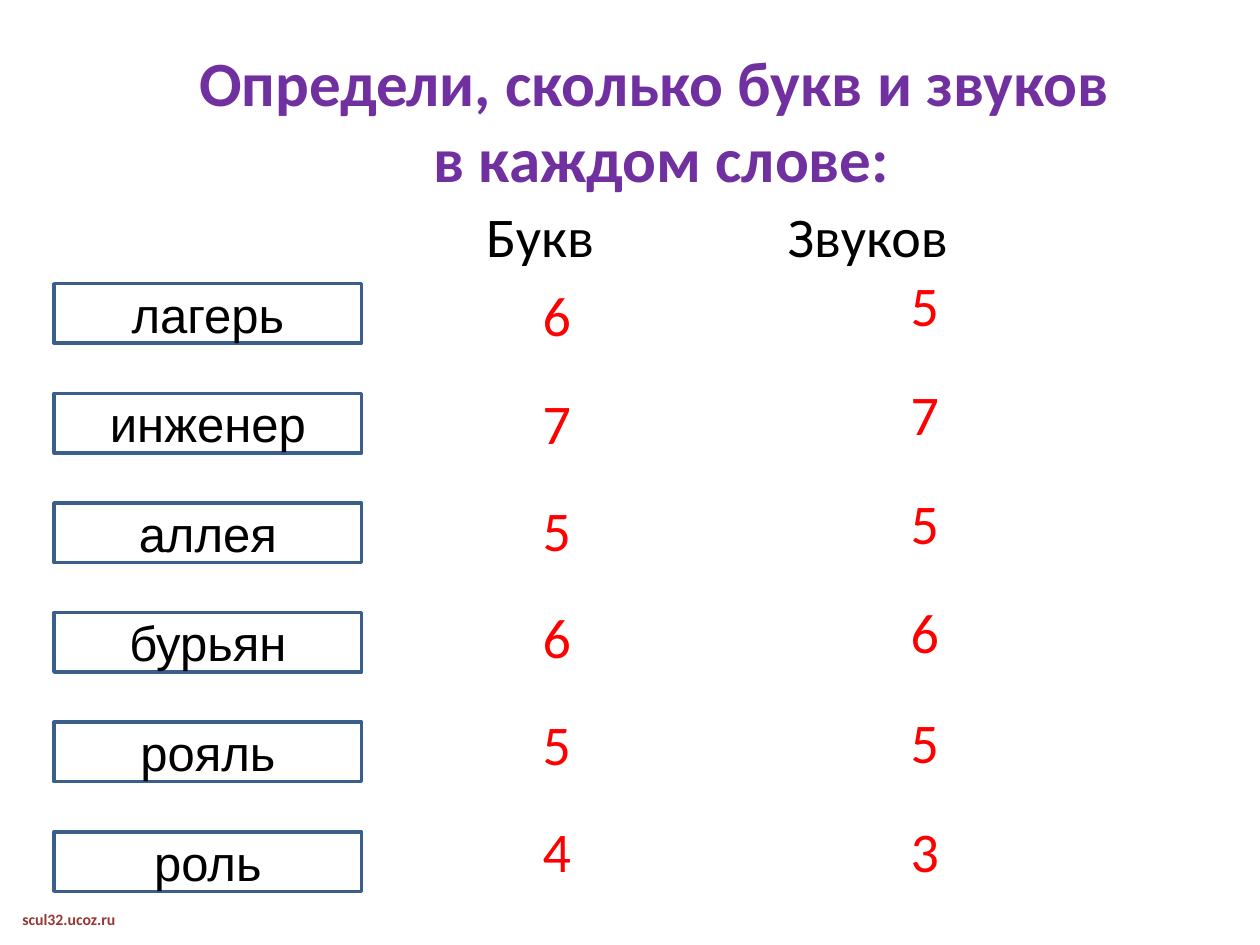
import pptx
import pptx.dml.color
import pptx.enum.shapes
import pptx.enum.text
import pptx.util
import lxml.etree

Cm = pptx.util.Cm
ALIGN = pptx.enum.text.PP_ALIGN
ANCHOR = pptx.enum.text.MSO_ANCHOR

WORDS = [
    ("лагерь", 6, 5),
    ("инженер", 7, 7),
    ("аллея", 5, 5),
    ("бурьян", 6, 6),
    ("рояль", 5, 5),
    ("роль", 4, 3),
]


def color(value):
    return pptx.dml.color.RGBColor.from_string(value)


def write(frame, text, size=32, font="Calibri", fill="000000", bold=False,
          align=ALIGN.LEFT, anchor=ANCHOR.TOP, tabs=()):
    frame.word_wrap = True
    frame.vertical_anchor = anchor
    paragraph = frame.paragraphs[0]
    paragraph.text = text
    paragraph.alignment = align
    if tabs:
        properties = paragraph._p.get_or_add_pPr()
        namespace = "{" + properties.nsmap["a"] + "}"
        tab_list = lxml.etree.SubElement(properties, namespace + "tabLst")
        for stop in tabs:
            lxml.etree.SubElement(tab_list, namespace + "tab",
                                  pos=str(Cm(stop)), algn="l")
    for run in paragraph.runs:
        run.font.size = pptx.util.Pt(size)
        run.font.name = font
        run.font.bold = bold
        run.font.color.rgb = color(fill)


def add_text(slide, left, top, width, height, text, **style):
    box = slide.shapes.add_textbox(Cm(left), Cm(top), Cm(width), Cm(height))
    write(box.text_frame, text, **style)


def add_title(slide, left, top, width, height):
    title = slide.shapes.title
    title.left, title.top = Cm(left), Cm(top)
    title.width, title.height = Cm(width), Cm(height)
    write(title.text_frame, "Определи, сколько букв и звуков \vв каждом слове:",
          size=36, fill="7030A0", bold=True, align=ALIGN.CENTER,
          anchor=ANCHOR.MIDDLE)


def add_word_column(slide, left, top, width, height, step, words):
    for row, word in enumerate(words):
        card = slide.shapes.add_shape(
            pptx.enum.shapes.MSO_SHAPE.RECTANGLE,
            Cm(left), Cm(top + row * step), Cm(width), Cm(height))
        card.shadow.inherit = False
        card.fill.background()
        card.line.color.rgb = color("3A5F8C")
        card.line.width = pptx.util.Pt(2)
        write(card.text_frame, word, size=28, font="Arial",
              align=ALIGN.CENTER, anchor=ANCHOR.MIDDLE)


def add_count_column(slide, left, top, width, height, step, counts):
    for row, count in enumerate(counts):
        add_text(slide, left, top + row * step, width, height, str(count),
                 fill="FF0000")


def main():
    deck = pptx.Presentation()
    deck.slide_width, deck.slide_height = Cm(25.4), Cm(19.05)
    slide = deck.slides.add_slide(deck.slide_layouts[5])
    words, letters, sounds = zip(*WORDS)

    add_text(slide, 0.2, 18.21, 5.56, 0.64, "scul32.ucoz.ru",
             size=9, fill="953735", bold=True)
    add_title(slide, 1.27, 0.91, 24.13, 3)
    add_text(slide, 0.71, 3.94, 24.69, 1.6, "\tБукв\tЗвуков",
             tabs=(8.84, 14.92))
    add_count_column(slide, 10.69, 5.54, 1.6, 1.62, 2.16, letters)
    add_count_column(slide, 18.11, 5.33, 1.6, 1.62, 2.2, sounds)
    add_word_column(slide, 1.09, 5.72, 6.2, 1.2, 2.21, words)

    deck.save("out.pptx")


if __name__ == "__main__":
    main()
